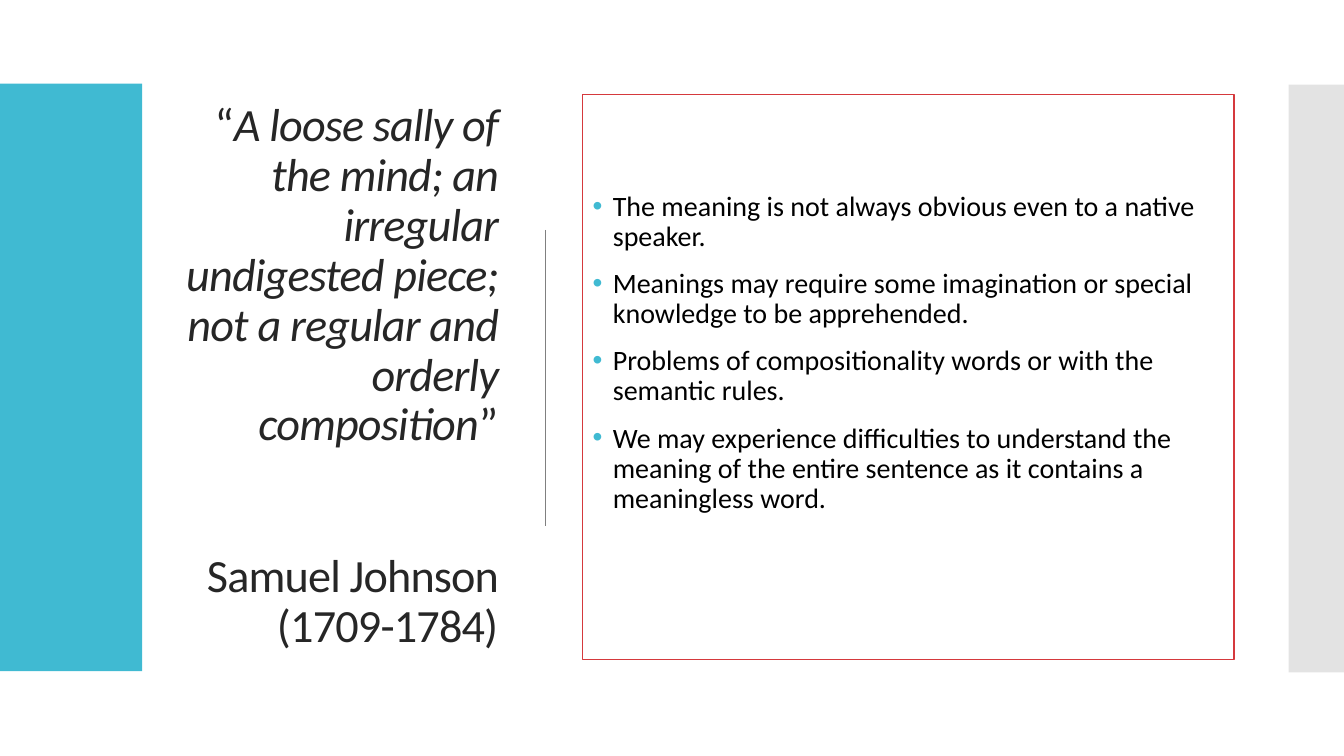
from lxml import etree
from pptx import Presentation
from pptx import util as u
from pptx.dml.color import RGBColor
from pptx.enum import shapes, text
from pptx.oxml.ns import qn

QUOTE = [
    ("“", False),
    ("A loose sally of the mind; an irregular undigested piece; "
     "not a regular and orderly composition", True),
    ("”", False),
]
AUTHOR = [("Samuel Johnson (1709-1784)", False)]
POINTS = [
    "The meaning is not always obvious even to a native speaker.",
    "Meanings may require some imagination or special knowledge to be apprehended.",
    "Problems of compositionality words or with the semantic rules.",
    "We may experience difficulties to understand the meaning of the entire "
    "sentence as it contains a meaningless word.",
]
COLORS = {"teal": "40BAD2", "gray": "C8C8C8", "rule": "808080", "frame": "D5393D",
          "white": "FFFFFF", "title": "262626", "body": "000000"}
FONT = "Calibri"
WIDTH, HEIGHT = 13.33, 7.5
BAND_TOP, BAND_HEIGHT = 0.83, 5.83
TEXT_TOP, TEXT_HEIGHT = 0.94, 5.6
AUTHOR_GAP = 72.5


def color(name):
    return RGBColor.from_string(COLORS[name])


def add_rect(page, left, top, width, height, fill):
    box = page.shapes.add_shape(shapes.MSO_SHAPE.RECTANGLE,
                                *map(u.Inches, (left, top, width, height)))
    box.shadow.inherit = False
    box.fill.solid()
    box.fill.fore_color.rgb = color(fill)
    box.line.fill.background()
    return box


def style(para, size, name, align):
    para.font.name = FONT
    para.font.size = u.Pt(size)
    para.font.color.rgb = color(name)
    para.alignment = align
    para.line_spacing = 0.9


def add_bullet(para):
    props = para._p.get_or_add_pPr()
    props.set("marL", str(u.Inches(0.2)))
    props.set("indent", str(u.Inches(-0.2)))
    tint = etree.Element(qn("a:buClr"))
    etree.SubElement(tint, qn("a:srgbClr"), val=COLORS["teal"])
    font = etree.Element(qn("a:buFont"), typeface="Arial")
    mark = etree.Element(qn("a:buChar"), char="•")
    place = props.index(props.find(qn("a:defRPr")))
    props[place:place] = [tint, font, mark]


def add_quote(page):
    box = page.shapes.add_textbox(*map(u.Inches, (1.68, TEXT_TOP, 3.36, TEXT_HEIGHT)))
    frame = box.text_frame
    frame.word_wrap = True
    frame.vertical_anchor = text.MSO_ANCHOR.MIDDLE
    for index, spans in enumerate((QUOTE, AUTHOR)):
        para = frame.add_paragraph() if index else frame.paragraphs[0]
        style(para, 33, "title", text.PP_ALIGN.RIGHT)
        para.space_before = u.Pt(AUTHOR_GAP * index)
        for words, italic in spans:
            span = para.add_run()
            span.text = words
            span.font.italic = italic
            span._r.get_or_add_rPr().set("spc", "-60")


def add_points(page):
    box = add_rect(page, 5.78, TEXT_TOP, 6.46, TEXT_HEIGHT, "white")
    box.line.color.rgb = color("frame")
    box.line.width = u.Pt(0.85)
    frame = box.text_frame
    frame.word_wrap = True
    frame.vertical_anchor = text.MSO_ANCHOR.MIDDLE
    frame.margin_bottom = u.Inches(0.52)
    for index, words in enumerate(POINTS):
        para = frame.add_paragraph() if index else frame.paragraphs[0]
        para.text = words
        style(para, 20, "body", text.PP_ALIGN.LEFT)
        para.space_before = u.Pt(12)
        add_bullet(para)


def add_rule(page):
    rule = page.shapes.add_connector(shapes.MSO_CONNECTOR.STRAIGHT,
                                     *map(u.Inches, (5.41, 2.28, 5.41, 5.22)))
    rule.line.color.rgb = color("rule")
    rule.line.width = u.Pt(1)
    etree.SubElement(rule._element.spPr, qn("a:effectLst"))


def main():
    deck = Presentation()
    deck.slide_width, deck.slide_height = u.Inches(WIDTH), u.Inches(HEIGHT)
    page = deck.slides.add_slide(deck.slide_layouts[6])
    add_quote(page)
    add_rect(page, 0, BAND_TOP, 1.41, BAND_HEIGHT, "teal")
    add_rule(page)
    add_points(page)
    side = add_rect(page, 12.78, 0.84, WIDTH - 12.78, BAND_HEIGHT, "gray")
    tint = side._element.spPr.find(qn("a:solidFill")).find(qn("a:srgbClr"))
    etree.SubElement(tint, qn("a:alpha"), val="50000")
    deck.save("out.pptx")


if __name__ == "__main__":
    main()
